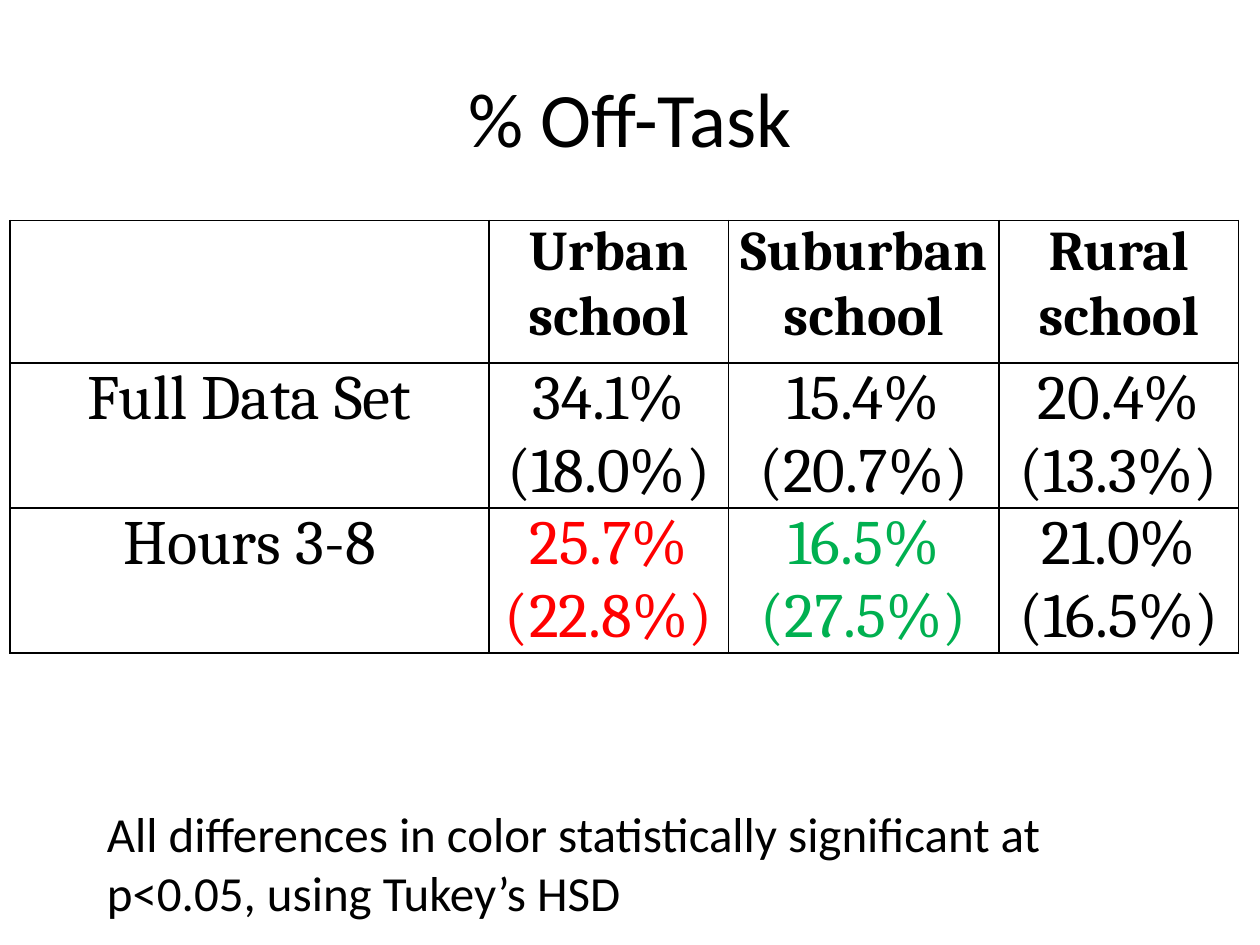
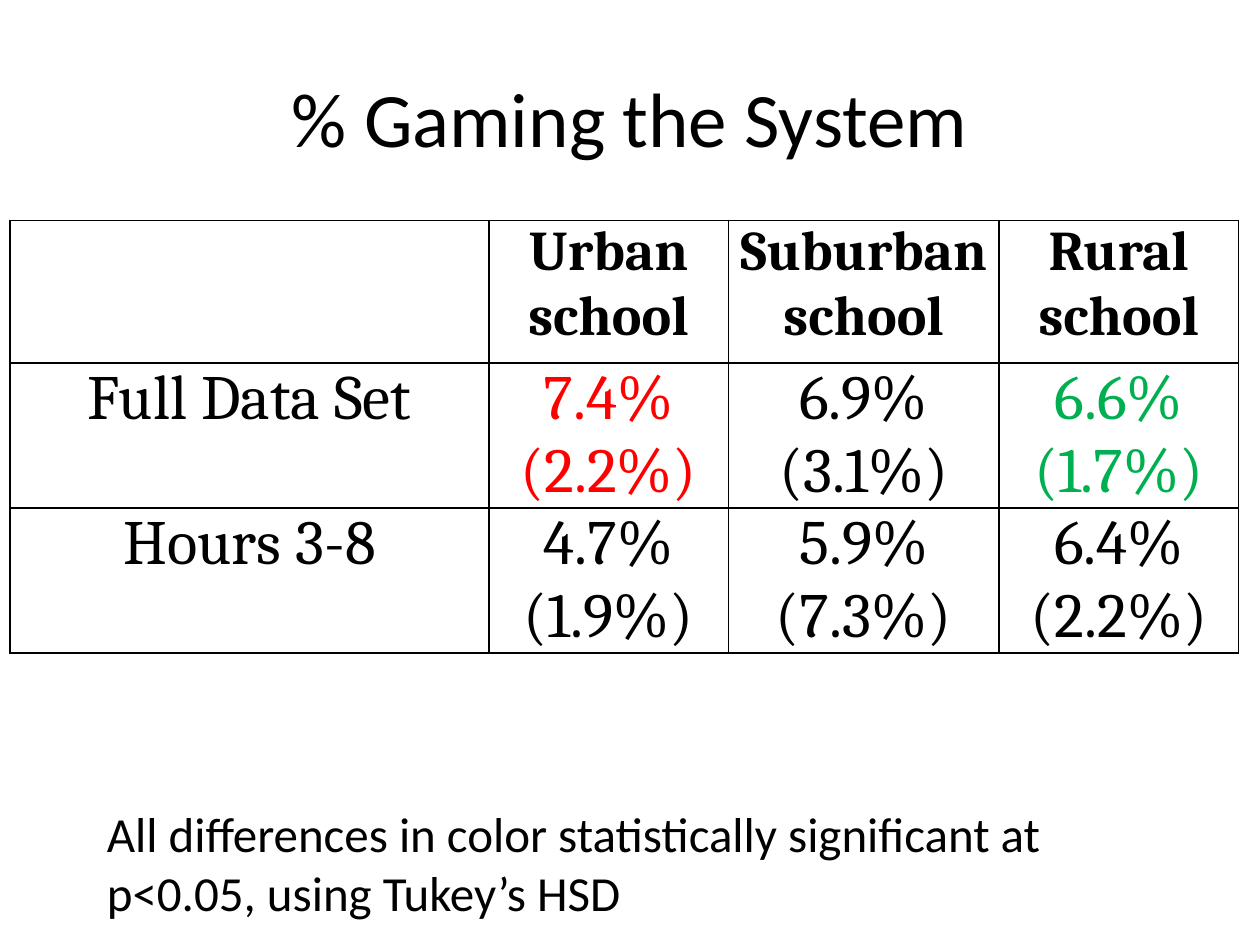
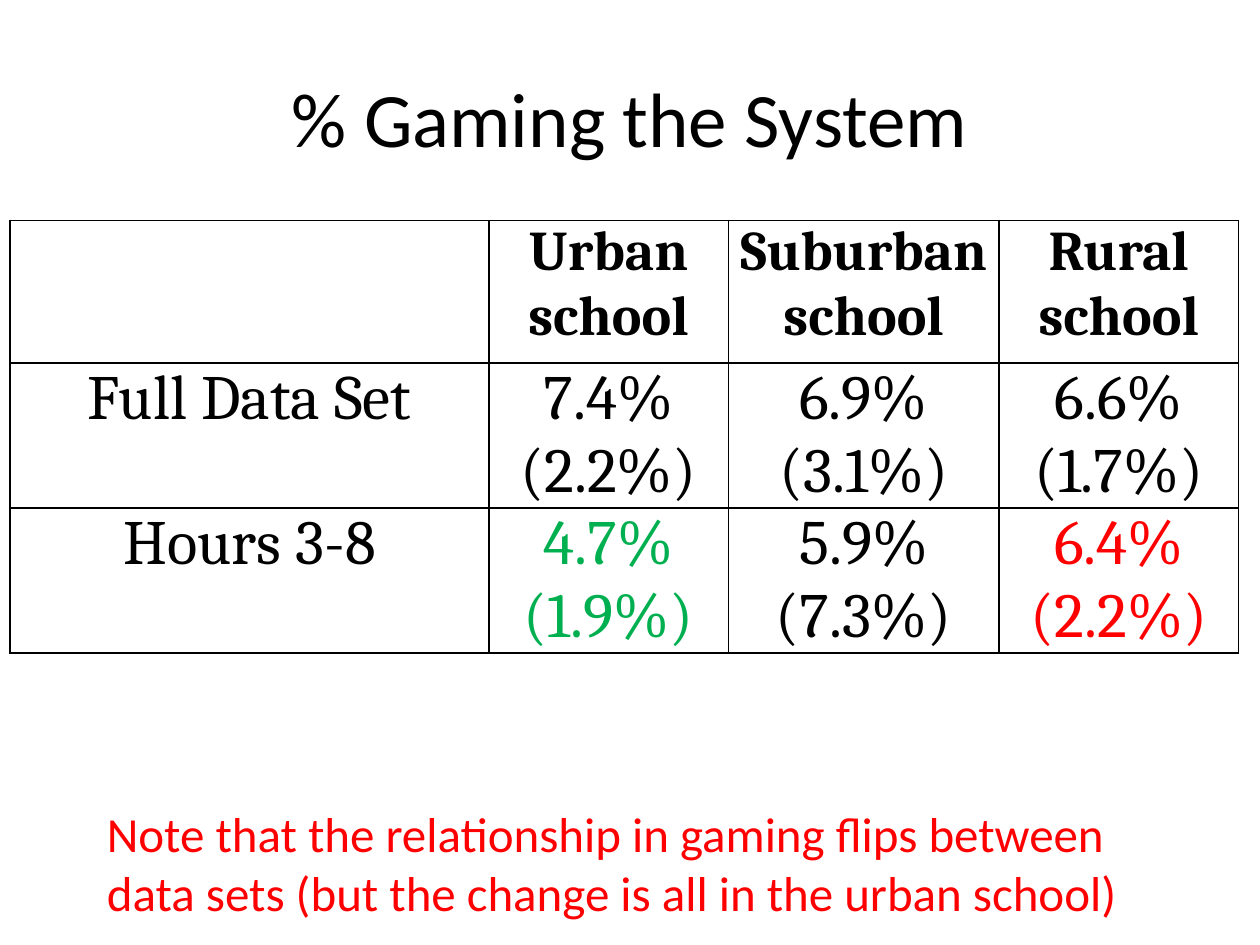
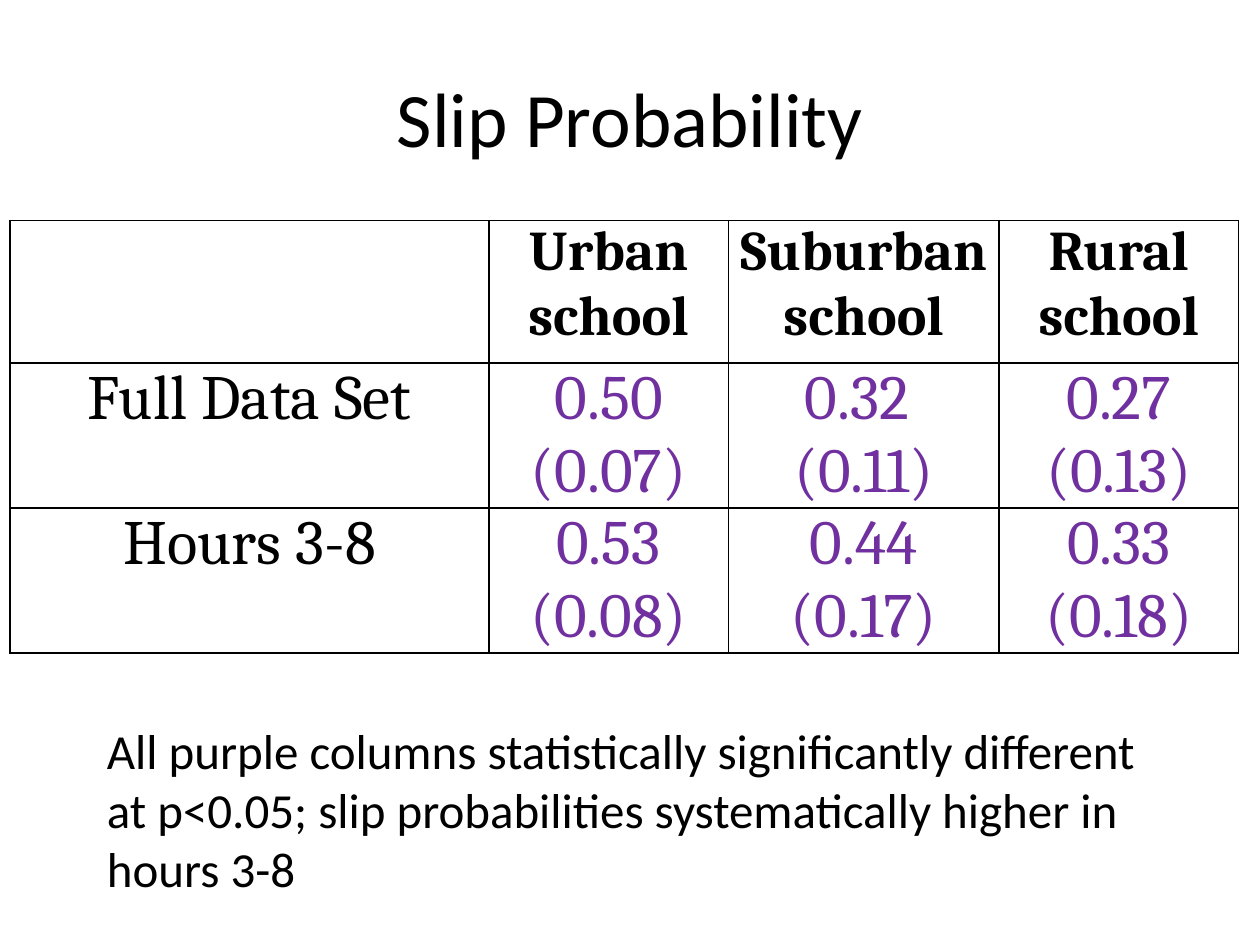
"""Build four slides of school comparison tables, each with a title and a note."""
from dataclasses import dataclass

from lxml import etree
from pptx import Presentation
from pptx import util as u
from pptx.dml.color import RGBColor
from pptx.enum import text
from pptx.oxml import ns

BLACK, RED, GREEN, PURPLE = "000000", "FF0000", "00B050", "7030A0"
BODY_FONT, TABLE_FONT = "Calibri", "Cambria"
SCHOOLS = ("Urban school", "Suburban school", "Rural school")
PERIODS = ("Full Data Set", "Hours 3-8")
COLUMN_WIDTHS = (3.8, 1.9, 2.15, 1.9)
ROW_HEIGHTS = (1.13, 1.01, 1.01)
SIGNIFICANCE = "All differences in color statistically significant at p<0.05, using Tukey’s HSD"
GAMING = (
    ("7.4% (2.2%)", "6.9% (3.1%)", "6.6% (1.7%)"),
    ("4.7% (1.9%)", "5.9% (7.3%)", "6.4% (2.2%)"),
)
PLAIN = (BLACK,) * 3


@dataclass(frozen=True)
class Note:
    """Text below the table."""
    words: str
    color: str = BLACK
    top: float = 6.33
    height: float = 1.04


@dataclass(frozen=True)
class Comparison:
    """One slide: values and their colours, by period and school."""
    title: str
    values: tuple[tuple[str, ...], ...]
    colors: tuple[tuple[str, ...], ...]
    note: Note


COMPARISONS = (
    Comparison(
        "% Off-Task",
        (("34.1% (18.0%)", "15.4% (20.7%)", "20.4% (13.3%)"),
         ("25.7% (22.8%)", "16.5% (27.5%)", "21.0% (16.5%)")),
        (PLAIN, (RED, GREEN, BLACK)),
        Note(SIGNIFICANCE),
    ),
    Comparison(
        "% Gaming the System", GAMING,
        ((RED, BLACK, GREEN), PLAIN),
        Note(SIGNIFICANCE),
    ),
    Comparison(
        "% Gaming the System", GAMING,
        (PLAIN, (GREEN, BLACK, RED)),
        Note("Note that the relationship in gaming flips between data sets "
             "(but the change is all in the urban school)", RED),
    ),
    Comparison(
        "Slip Probability",
        (("0.50 (0.07)", "0.32 \v(0.11)", "0.27 (0.13)"),
         ("0.53 (0.08)", "0.44 (0.17)", "0.33 (0.18)")),
        ((PURPLE,) * 3,) * 2,
        Note("All purple columns statistically significantly different at p<0.05; "
             "slip probabilities systematically higher in hours 3-8", top=5.67, height=1.51),
    ),
)


def style(para, font: str, size: int, color: str = BLACK, bold: bool = False) -> None:
    """Set the font of a whole paragraph."""
    para.font.name = font
    para.font.size = u.Pt(size)
    para.font.bold = bold
    para.font.color.rgb = RGBColor.from_string(color)


def add_borders(cell) -> None:
    """Draw a thin black line on each side of a cell."""
    properties = cell._tc.get_or_add_tcPr()
    for side in ("a:lnL", "a:lnR", "a:lnT", "a:lnB"):
        line = etree.SubElement(properties, ns.qn(side), w=str(u.Pt(1)))
        fill = etree.SubElement(line, ns.qn("a:solidFill"))
        etree.SubElement(fill, ns.qn("a:srgbClr"), val=BLACK)


def fill_cell(cell, words: str, size: int, color: str = BLACK, bold: bool = False) -> None:
    """Format a table cell and write its text."""
    add_borders(cell)
    cell.fill.background()
    cell.margin_left = cell.margin_right = u.Inches(0.07)
    cell.margin_top = cell.margin_bottom = 0
    if words:
        cell.text = words
    para = cell.text_frame.paragraphs[0]
    para.alignment = text.PP_ALIGN.CENTER
    style(para, TABLE_FONT, size, color, bold)


def add_title(page, words: str) -> None:
    """Place and fill the title placeholder."""
    title = page.shapes.title
    title.left, title.top = u.Inches(0.5), u.Inches(0.3)
    title.width, title.height = u.Inches(9), u.Inches(1.25)
    title.text_frame.text = words
    title.text_frame.vertical_anchor = text.MSO_ANCHOR.MIDDLE
    para = title.text_frame.paragraphs[0]
    para.alignment = text.PP_ALIGN.CENTER
    style(para, BODY_FONT, 44)


def add_comparison_table(page, comparison: Comparison) -> None:
    """Add the table of periods by schools."""
    table = page.shapes.add_table(
        len(ROW_HEIGHTS), len(COLUMN_WIDTHS), u.Inches(0.08), u.Inches(1.75),
        u.Inches(sum(COLUMN_WIDTHS)), u.Inches(sum(ROW_HEIGHTS))).table
    table.first_row = table.horz_banding = False
    for column, width in zip(table.columns, COLUMN_WIDTHS):
        column.width = u.Inches(width)
    for row, height in zip(table.rows, ROW_HEIGHTS):
        row.height = u.Inches(height)
    for index, words in enumerate(("",) + SCHOOLS):
        fill_cell(table.cell(0, index), words, 32, bold=True)
    rows = zip(PERIODS, comparison.values, comparison.colors)
    for row, (period, values, colors) in enumerate(rows, start=1):
        fill_cell(table.cell(row, 0), period, 36)
        for column, (value, color) in enumerate(zip(values, colors), start=1):
            fill_cell(table.cell(row, column), value, 36, color)


def add_note(page, note: Note) -> None:
    """Add the remark below the table."""
    box = page.shapes.add_textbox(
        u.Inches(0.75), u.Inches(note.top), u.Inches(8.58), u.Inches(note.height))
    frame = box.text_frame
    frame.word_wrap = True
    frame.auto_size = text.MSO_AUTO_SIZE.SHAPE_TO_FIT_TEXT
    frame.text = note.words
    style(frame.paragraphs[0], BODY_FONT, 28, note.color)


def main() -> None:
    """Build and save the deck."""
    deck = Presentation()
    deck.slide_width, deck.slide_height = u.Inches(10), u.Inches(7.5)
    title_only = deck.slide_layouts.get_by_name("Title Only")
    for comparison in COMPARISONS:
        page = deck.slides.add_slide(title_only)
        add_title(page, comparison.title)
        add_comparison_table(page, comparison)
        add_note(page, comparison.note)
    deck.save("out.pptx")


if __name__ == "__main__":
    main()
